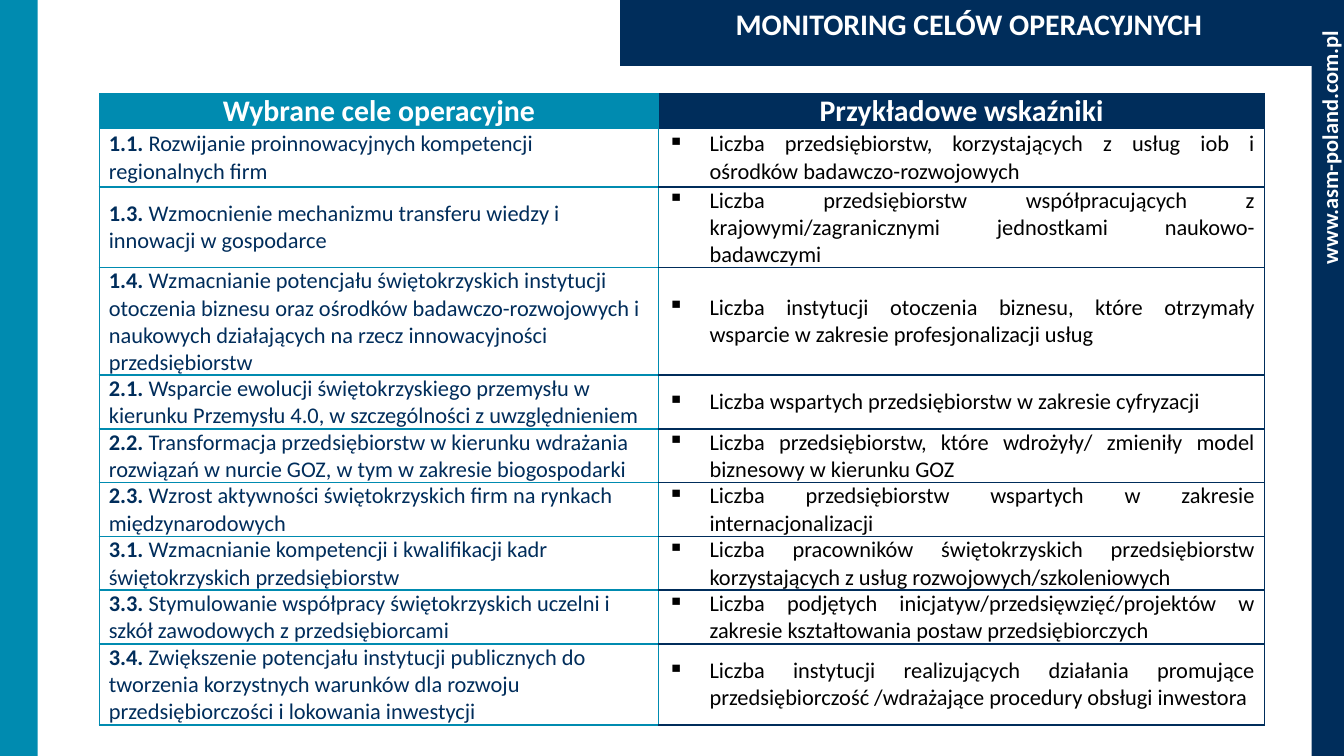
"""Build the slide that pairs operational goals with their example indicators."""
from dataclasses import dataclass

from lxml.etree import SubElement
from pptx import Presentation
from pptx.dml.color import RGBColor as RGB
from pptx.enum.shapes import MSO_SHAPE as Shape
from pptx.enum.text import MSO_ANCHOR as Anchor, PP_ALIGN as Align
from pptx.oxml.ns import qn
from pptx.util import Inches, Pt


@dataclass(frozen=True)
class Theme:
    font: str = "Calibri"
    teal: str = "008BB0"
    navy: str = "002D5B"
    white: str = "FFFFFF"
    black: str = "000000"
    heading: int = 16
    body: int = 12
    border: int = 1


theme = Theme()
deck = Presentation()
deck.slide_width = Inches(10)
deck.slide_height = deck.slide_width * 9 // 16
page = deck.slides.add_slide(deck.slide_layouts[6])
UNIT = deck.slide_width / 100
PAGE_ROWS = deck.slide_height / UNIT


def grid(*counts):
    return [round(count * UNIT) for count in counts]


def style(span, size, color, bold=False):
    span.font.name, span.font.size, span.font.bold = theme.font, Pt(size), bold
    span.font.color.rgb = RGB.from_string(color)


for left, width, color in [(0, 2.8, theme.teal), (97.6, 2.4, theme.navy)]:
    bar = page.shapes.add_shape(Shape.RECTANGLE, *grid(left, 0, width, PAGE_ROWS))
    bar.shadow.inherit = False
    bar.fill.solid()
    bar.fill.fore_color.rgb = RGB.from_string(color)
    bar.line.fill.background()

address = page.shapes.add_textbox(*grid(88.6, 10.1, 20.6, 3))
address.rotation = 270
address.text_frame.word_wrap = True
address.text_frame.text = "www.asm-poland.com.pl"
para = address.text_frame.paragraphs[0]
para.alignment = Align.RIGHT
style(para.runs[0], theme.body, theme.white, True)

goals = [
    ("1.1.", "Rozwijanie proinnowacyjnych kompetencji regionalnych firm",
     "Liczba przedsiębiorstw, korzystających z usług iob i ośrodków badawczo-rozwojowych"),
    ("1.3.", "Wzmocnienie mechanizmu transferu wiedzy i innowacji w gospodarce",
     "Liczba przedsiębiorstw współpracujących z krajowymi/zagranicznymi jednostkami "
     "naukowo-badawczymi"),
    ("1.4.", "Wzmacnianie potencjału świętokrzyskich instytucji otoczenia biznesu oraz ośrodków "
     "badawczo-rozwojowych i naukowych działających na rzecz innowacyjności przedsiębiorstw",
     "Liczba instytucji otoczenia biznesu, które otrzymały wsparcie w zakresie "
     "profesjonalizacji usług"),
    ("2.1.", "Wsparcie ewolucji świętokrzyskiego przemysłu w kierunku Przemysłu 4.0, "
     "w szczególności z uwzględnieniem",
     "Liczba wspartych przedsiębiorstw w zakresie cyfryzacji"),
    ("2.2.", "Transformacja przedsiębiorstw w kierunku wdrażania rozwiązań w nurcie GOZ, "
     "w tym w zakresie biogospodarki",
     "Liczba przedsiębiorstw, które wdrożyły/ zmieniły model biznesowy w kierunku GOZ"),
    ("2.3.", "Wzrost aktywności świętokrzyskich firm na rynkach międzynarodowych",
     "Liczba przedsiębiorstw wspartych w zakresie internacjonalizacji"),
    ("3.1.", "Wzmacnianie kompetencji i kwalifikacji kadr świętokrzyskich przedsiębiorstw",
     "Liczba pracowników świętokrzyskich przedsiębiorstw korzystających z usług "
     "rozwojowych/szkoleniowych"),
    ("3.3.", "Stymulowanie współpracy świętokrzyskich uczelni i szkół zawodowych "
     "z przedsiębiorcami",
     "Liczba podjętych inicjatyw/przedsięwzięć/projektów w zakresie kształtowania postaw "
     "przedsiębiorczych"),
    ("3.4.", "Zwiększenie potencjału instytucji publicznych do tworzenia korzystnych warunków "
     "dla rozwoju przedsiębiorczości i lokowania inwestycji",
     "Liczba instytucji realizujących działania promujące przedsiębiorczość /wdrażające "
     "procedury obsługi inwestora"),
]

LINE = 2
goal_lines = [2, 3, 4, 2, 2, 2, 2, 2, 3]
row_heights = [2.7] + [LINE * lines for lines in goal_lines]
row_heights[1] = 4.3
column_widths = [41.6, 45.1]

banner_frame = page.shapes.add_table(1, 1, *grid(46.1, 0, 52, 4.9))
goals_frame = page.shapes.add_table(
    len(row_heights), 2, *grid(7.4, 6.9, sum(column_widths), sum(row_heights)))
for frame in (banner_frame, goals_frame):
    frame.table.horz_banding = False
    style_id = frame.table._tbl.tblPr.find(qn("a:tableStyleId"))
    style_id.text = "{2D5ABB26-0587-4C30-8999-92F81FD0307C}"

banner, table = banner_frame.table, goals_frame.table
for column, width in zip(table.columns, grid(*column_widths)):
    column.width = width
for row, height in zip(table.rows, grid(*row_heights)):
    row.height = height
for cell in table.iter_cells():
    cell.vertical_anchor = Anchor.MIDDLE
    cell.margin_left, cell.margin_right, cell.margin_top, cell.margin_bottom = grid(0.7, 0.7, 0, 0)

for cell, title, color in [
    (banner.cell(0, 0), "MONITORING CELÓW OPERACYJNYCH", theme.navy),
    (table.cell(0, 0), "Wybrane cele operacyjne", theme.teal),
    (table.cell(0, 1), "Przykładowe wskaźniki", theme.navy),
]:
    cell.fill.solid()
    cell.fill.fore_color.rgb = RGB.from_string(color)
    cell.text_frame.text = title
    para = cell.text_frame.paragraphs[0]
    para.alignment = Align.CENTER
    style(para.runs[0], theme.heading, theme.white, True)

for row, (number, goal, indicator) in enumerate(goals, start=1):
    goal_cell, indicator_cell = table.cell(row, 0), table.cell(row, 1)

    para = goal_cell.text_frame.paragraphs[0]
    for text, bold in [(number + " ", True), (goal, False)]:
        span = para.add_run()
        span.text = text
        style(span, theme.body, theme.navy, bold)

    indicator_cell.text_frame.text = indicator
    para = indicator_cell.text_frame.paragraphs[0]
    para.alignment = Align.JUSTIFY
    indent = grid(3.1)[0]
    bullet = para._p.get_or_add_pPr()
    bullet.set("marL", str(indent))
    bullet.set("indent", str(-indent))
    SubElement(bullet, qn("a:buChar"), char="▪")
    style(para.runs[0], theme.body, theme.black)

    for cell, color in [(goal_cell, theme.teal), (indicator_cell, theme.navy)]:
        sides = {"L": theme.teal, "R": color, "T": color, "B": color}
        if row == 1:
            del sides["T"]
        for side, side_color in sides.items():
            edge = SubElement(cell._tc.get_or_add_tcPr(), qn("a:ln" + side),
                              w=str(Pt(theme.border)))
            SubElement(SubElement(edge, qn("a:solidFill")), qn("a:srgbClr"), val=side_color)
        cell.fill.background()

deck.save("out.pptx")
